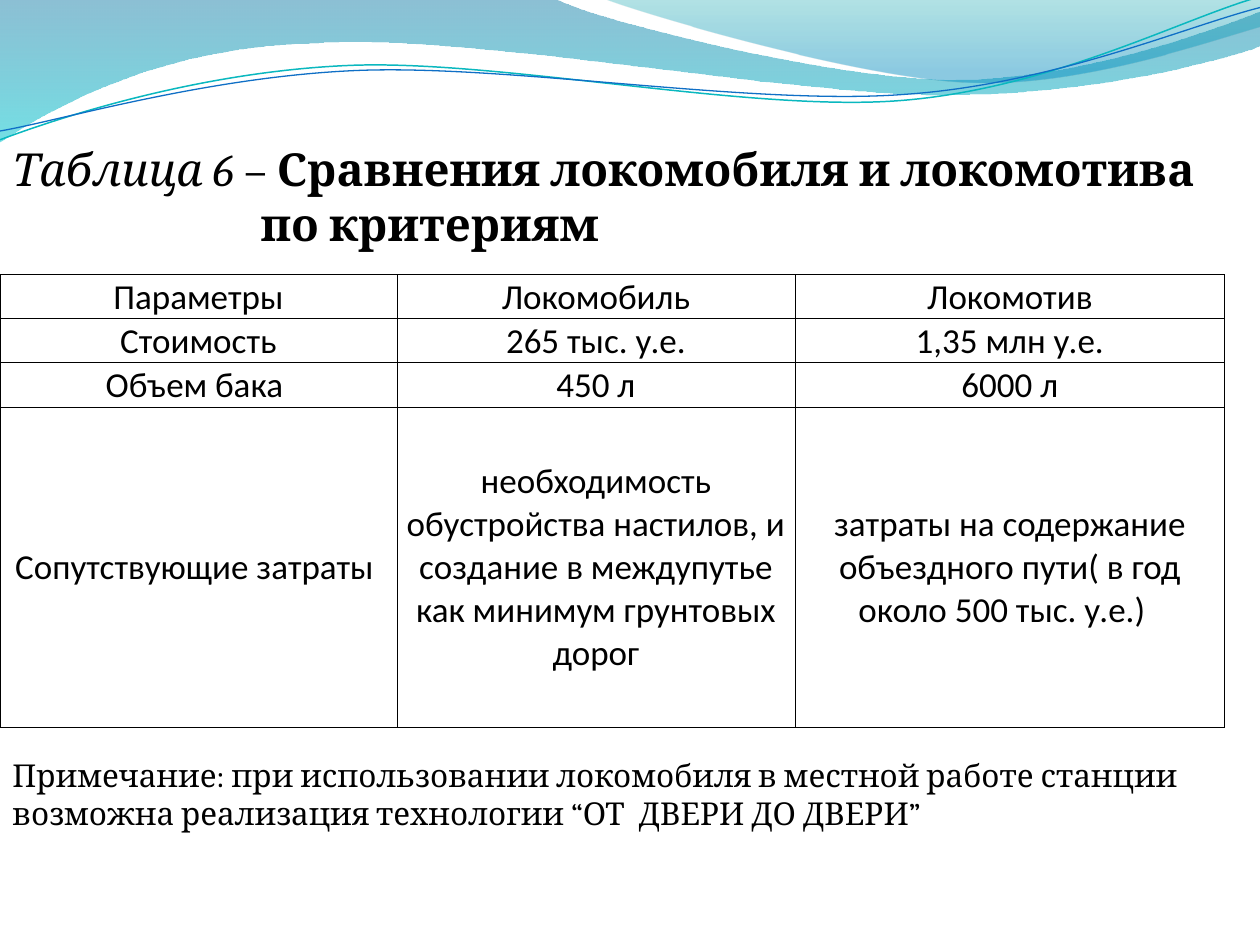
import pptx
import pptx.dml.color
import pptx.enum.text
import pptx.oxml
import pptx.oxml.ns
import pptx.util

Inches = pptx.util.Inches
Pt = pptx.util.Pt
qn = pptx.oxml.ns.qn
namespace = pptx.oxml.ns.nsdecls("a")


def colour(code):
    return pptx.dml.color.RGBColor.from_string(code)


class Slide:
    text_colour = "000000"
    heading_font = "Cambria"
    table_font = "Calibri"

    def __init__(self, deck):
        self.page = deck.slides.add_slide(deck.slide_layouts[6])

    def outline(self, start, segments, close):
        points = [point for segment in segments for point in segment]
        builder = self.page.shapes.build_freeform(*map(Inches, start))
        builder.add_line_segments(
            [(Inches(x), Inches(y)) for x, y in points], close=close)
        shape = builder.convert_to_shape()
        shape.shadow.inherit = False
        lines = iter(list(shape._element.iter(qn("a:lnTo"))))
        for segment in segments:
            group = [next(lines) for _ in segment]
            if len(group) == 3:
                curve = pptx.oxml.parse_xml(f"<a:cubicBezTo {namespace}/>")
                group[0].addprevious(curve)
                for line in group:
                    curve.append(line[0])
                    line.getparent().remove(line)
        return shape

    def wave(self, start, segments, stops):
        shape = self.outline(start, segments, True)
        shape.line.fill.background()
        shape.fill.gradient()
        shape.fill.gradient_angle = 270
        for stop, (position, code, _) in zip(shape.fill.gradient_stops, stops):
            stop.position = position
            stop.color.rgb = colour(code)
        tones = shape._element.spPr.iter(qn("a:srgbClr"))
        for tone, (_, _, opacity) in zip(tones, stops):
            tone.append(pptx.oxml.parse_xml(
                f'<a:alpha {namespace} val="{opacity * 1000}"/>'))

    def strand(self, start, segments, code, width):
        shape = self.outline(start, segments, False)
        shape.fill.background()
        shape.line.color.rgb = colour(code)
        shape.line.width = Pt(width)

    def style(self, para, font, size):
        para.font.name = font
        para.font.size = Pt(size)
        para.font.color.rgb = colour(self.text_colour)

    def text(self, left, top, width, height, spans, size, hanging=0, before=0):
        box = self.page.shapes.add_textbox(
            Inches(left), Inches(top), Inches(width), Inches(height))
        box.text_frame.word_wrap = True
        para = box.text_frame.paragraphs[0]
        self.style(para, self.heading_font, size)
        if before:
            para.space_before = Pt(before)
        if hanging:
            properties = para._p.get_or_add_pPr()
            properties.set("marL", str(Inches(hanging)))
            properties.set("indent", str(-Inches(hanging)))
        for words, bold, italic in spans:
            span = para.add_run()
            span.text = words
            span.font.bold = bold
            span.font.italic = italic
        return box

    def border(self, cell, width):
        properties = cell._tc.get_or_add_tcPr()
        for side in ("lnL", "lnR", "lnT", "lnB"):
            properties.append(pptx.oxml.parse_xml(
                f'<a:{side} {namespace} w="{Pt(width)}">'
                f'<a:solidFill><a:srgbClr val="{self.text_colour}"/></a:solidFill>'
                f'</a:{side}>'))

    def table(self, left, top, widths, heights, rows, size):
        frame = self.page.shapes.add_table(
            len(rows), len(widths), Inches(left), Inches(top),
            Inches(sum(widths)), Inches(sum(heights)))
        table = frame.table
        table.first_row = False
        table.horz_banding = False
        for column, width in zip(table.columns, widths):
            column.width = Inches(width)
        for row, height, entries in zip(table.rows, heights, rows):
            row.height = Inches(height)
            for cell, words in zip(row.cells, entries):
                self.border(cell, 0.5)
                cell.fill.background()
                cell.margin_left = cell.margin_right = cell.margin_top = Inches(0.01)
                cell.margin_bottom = 0
                cell.vertical_anchor = pptx.enum.text.MSO_ANCHOR.MIDDLE
                cell.text = words
                para = cell.text_frame.paragraphs[0]
                para.alignment = pptx.enum.text.PP_ALIGN.CENTER
                self.style(para, self.table_font, size)


def main():
    deck = pptx.Presentation()
    deck.slide_width = Inches(10)
    deck.slide_height = Inches(7.5)
    slide = Slide(deck)

    slide.wave((0, 0), [
        [(4.4, -0.01)],
        [(4.76, 0.17), (6.64, 0.63), (7.58, 0.63)],
        [(8.53, 0.63), (9.58, 0.26), (10, 0.09)],
        [(10.01, 0.36)],
        [(9.83, 0.44), (8.7, 0.76), (7.46, 0.75)],
        [(6.22, 0.75), (3.82, 0.28), (2.57, 0.34)],
        [(1.29, 0.36), (0.46, 0.83), (-0.01, 1.13)],
    ], [(0, "0074A1", 45), (1, "00C6CF", 55)])
    slide.wave((4.79, -0.01), [
        [(5.09, 0.11), (6.82, 0.62), (7.69, 0.65)],
        [(8.56, 0.69), (9.61, 0.32), (10, 0.21)],
        [(10, 0)],
    ], [(0, "00A1A9", 30), (0.8, "008BBF", 45)])

    slide.strand((0, 1.11), [
        [(0.48, 0.93), (1.58, 0.57), (2.77, 0.52)],
        [(3.95, 0.47), (5.93, 0.89), (7.13, 0.8)],
        [(8.33, 0.71), (9.38, 0.15), (9.98, -0.02)],
    ], "0AB8BF", 0.85)
    slide.strand((0, 1.04), [
        [(0.47, 0.96), (1.64, 0.61), (2.83, 0.56)],
        [(4.03, 0.51), (5.97, 0.84), (7.17, 0.75)],
        [(8.36, 0.67), (9.41, 0.21), (10, 0.06)],
    ], "0F6FC6", 0.75)

    slide.text(0, 1.07, 10, 0.94, [
        ("Таблица 6 ", False, True),
        ("– ", False, False),
        ("Сравнения локомобиля и локомотива по критериям", True, False),
    ], 26, hanging=1.97, before=5.2)

    slide.table(0, 2.18, [3.15, 3.16, 3.41], [0.35, 0.35, 0.35, 2.54], [
        ("Параметры", "Локомобиль", "Локомотив"),
        ("Стоимость", "265 тыс. у.е.", "1,35 млн у.е."),
        ("Объем бака ", "450 л", "6000 л"),
        ("Сопутствующие затраты ",
         "необходимость обустройства настилов, и создание в междупутье "
         "как минимум грунтовых дорог",
         "затраты на содержание объездного пути( в год около 500 тыс. у.е.)  "),
    ], 20)

    note = slide.text(0, 5.95, 9.72, 0.71, [
        ("Примечание: при использовании локомобиля в местной работе станции "
         "возможна реализация технологии “ОТ  ДВЕРИ ДО ДВЕРИ”", False, False),
    ], 18)
    note.text_frame.auto_size = pptx.enum.text.MSO_AUTO_SIZE.SHAPE_TO_FIT_TEXT

    deck.save("out.pptx")


if __name__ == "__main__":
    main()
